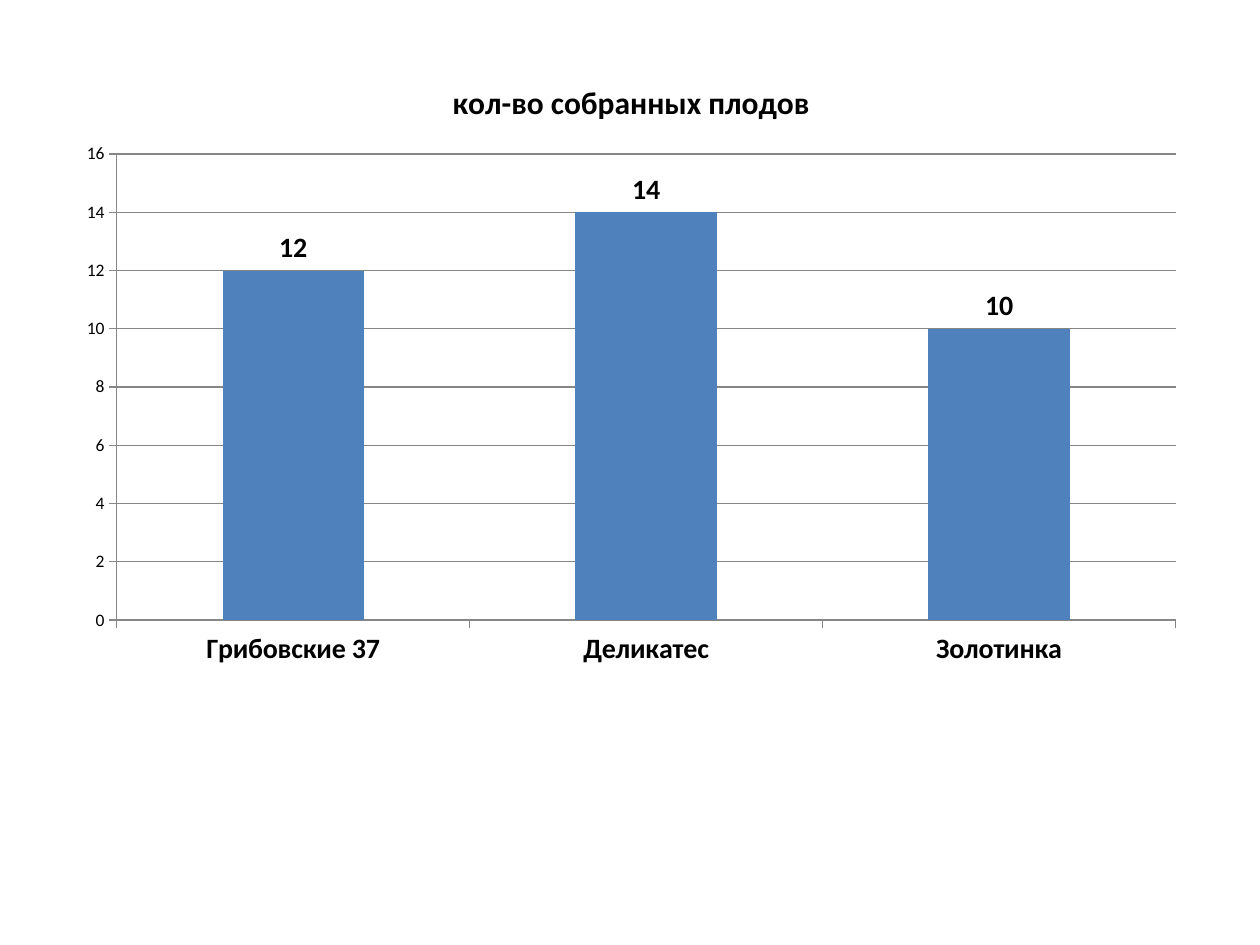
from dataclasses import dataclass

from pptx import Presentation
from pptx.chart.data import CategoryChartData
from pptx.dml.color import RGBColor
from pptx.enum.chart import XL_CHART_TYPE, XL_LABEL_POSITION, XL_TICK_MARK
from pptx.util import Inches, Pt


@dataclass(frozen=True)
class Theme:
    font: str = "Calibri"
    text: RGBColor = RGBColor(0x00, 0x00, 0x00)
    bar: RGBColor = RGBColor(0x4F, 0x81, 0xBD)
    line: RGBColor = RGBColor(0x86, 0x86, 0x86)
    title_size: int = 18
    label_size: int = 16
    scale_size: int = 10


THEME = Theme()
TITLE = "кол-во собранных плодов"
HARVEST = {"Грибовские 37": 12, "Деликатес": 14, "Золотинка": 10}


def style_font(font, size, bold=False):
    font.name = THEME.font
    font.size = Pt(size)
    font.bold = bold
    font.color.rgb = THEME.text


def add_text(frame, text, size, bold=False):
    span = frame.paragraphs[0].add_run()
    span.text = text
    style_font(span.font, size, bold)


def style_line(line):
    line.color.rgb = THEME.line
    line.width = Pt(0.75)


def style_axis(axis, size, bold=False):
    axis.major_tick_mark = XL_TICK_MARK.OUTSIDE
    axis.minor_tick_mark = XL_TICK_MARK.NONE
    style_line(axis.format.line)
    style_font(axis.tick_labels.font, size, bold)


def style_scale(axis):
    style_axis(axis, THEME.scale_size)
    axis.minimum_scale = 0
    axis.maximum_scale = 16
    axis.major_unit = 2
    axis.has_major_gridlines = True
    style_line(axis.major_gridlines.format.line)


def style_bars(plot):
    plot.gap_width = 150
    plot.vary_by_categories = False
    fill = plot.series[0].format.fill
    fill.solid()
    fill.fore_color.rgb = THEME.bar
    labels = plot.series[0].data_labels
    labels.show_value = True
    labels.position = XL_LABEL_POSITION.OUTSIDE_END
    style_font(labels.font, THEME.label_size, bold=True)


def add_harvest_chart(page):
    data = CategoryChartData()
    data.categories = list(HARVEST)
    data.add_series(TITLE, list(HARVEST.values()))
    chart = page.shapes.add_chart(
        XL_CHART_TYPE.COLUMN_CLUSTERED,
        Inches(0.51), Inches(0.44), Inches(9), Inches(4.95), data,
    ).chart
    style_font(chart.font, THEME.scale_size)
    chart.has_legend = False
    chart.has_title = True
    add_text(chart.chart_title.text_frame, TITLE, THEME.title_size, bold=True)
    chart.chart_title.include_in_layout = False
    style_axis(chart.category_axis, THEME.label_size, bold=True)
    style_scale(chart.value_axis)
    style_bars(chart.plots[0])


def main():
    deck = Presentation()
    deck.slide_width = Inches(10)
    deck.slide_height = Inches(7.5)
    page = deck.slides.add_slide(deck.slide_layouts[6])
    add_harvest_chart(page)
    deck.save("out.pptx")


if __name__ == "__main__":
    main()
